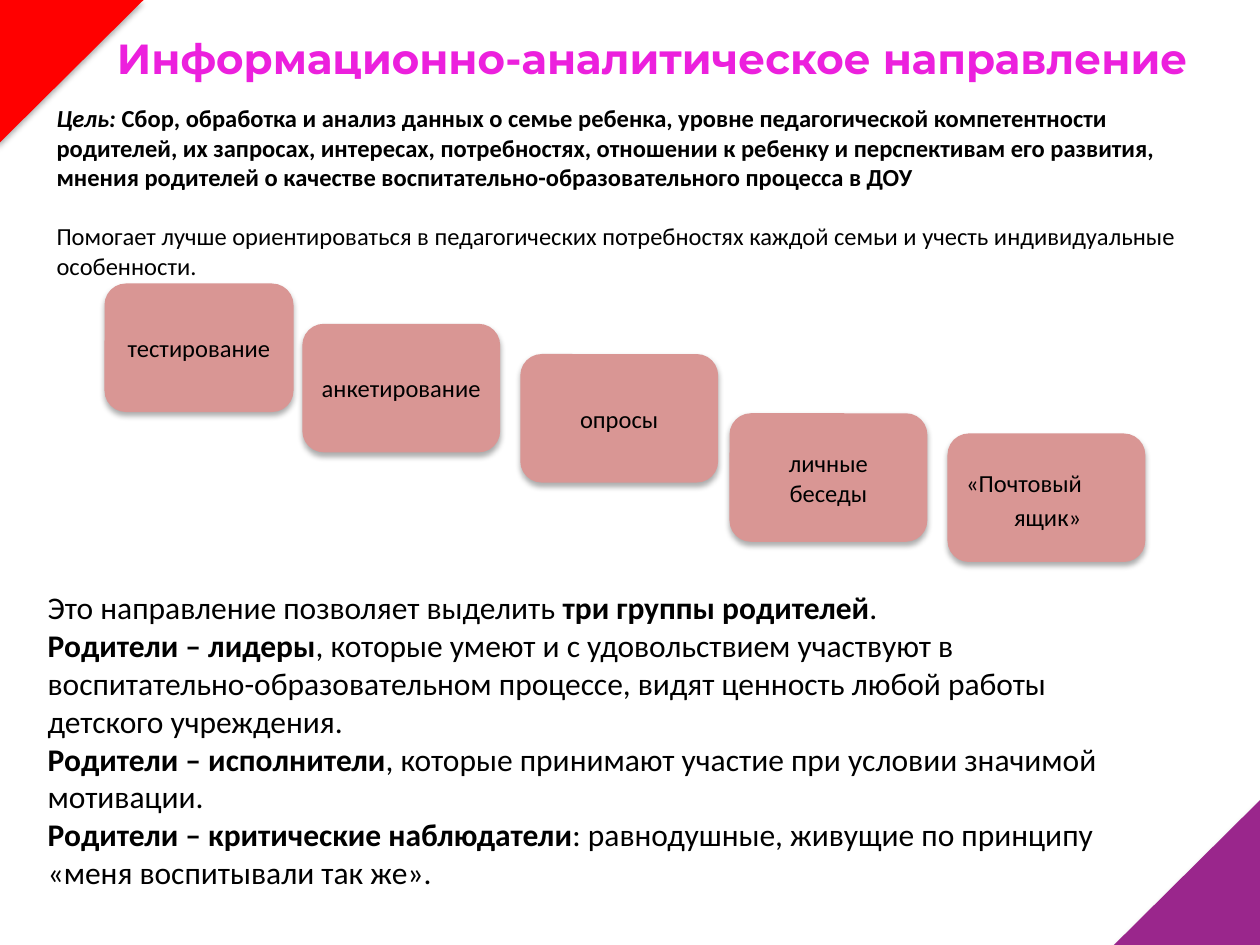
import pptx
import pptx.dml.color
import pptx.enum.shapes
import pptx.enum.text
import pptx.oxml
import pptx.oxml.ns
import pptx.util

Inches = pptx.util.Inches
Pt = pptx.util.Pt
RGBColor = pptx.dml.color.RGBColor
MSO_SHAPE = pptx.enum.shapes.MSO_SHAPE
PP_ALIGN = pptx.enum.text.PP_ALIGN

BLACK = RGBColor(0x00, 0x00, 0x00)
MAGENTA = RGBColor(0xEC, 0x20, 0xDD)
RED = RGBColor(0xFF, 0x00, 0x00)
PURPLE = RGBColor(0x9A, 0x26, 0x8C)
PINK = RGBColor(0xD9, 0x96, 0x94)

SHADOW = (
    '<a:outerShdw %s blurRad="44450" dist="27940" dir="5400000" rotWithShape="0">'
    '<a:srgbClr val="000000"><a:alpha val="32000"/></a:srgbClr></a:outerShdw>'
    % pptx.oxml.ns.nsdecls("a")
)

TITLE = "Информационно-аналитическое направление"
GOAL = [
    [("Цель: ", True, True),
     ("Сбор, обработка и анализ данных о семье ребенка, уровне педагогической "
      "компетентности родителей, их запросах, интересах, потребностях, отношении "
      "к ребенку и перспективам его развития, мнения родителей о качестве "
      "воспитательно-образовательного процесса в ДОУ", True, False)],
    [("Помогает лучше ориентироваться в педагогических потребностях каждой семьи "
      "и учесть индивидуальные особенности.", False, False)],
]
GROUPS = [
    [("Это направление позволяет выделить ", False, False),
     ("три группы родителей", True, False), (".", False, False)],
    [("Родители – лидеры", True, False),
     (", которые умеют и с удовольствием участвуют в воспитательно-образовательном "
      "процессе, видят ценность любой работы детского учреждения.", False, False)],
    [("Родители – исполнители", True, False),
     (", которые принимают участие при условии значимой мотивации.", False, False)],
    [("Родители – критические наблюдатели", True, False),
     (": равнодушные, живущие по принципу «меня воспитывали так же».", False, False)],
]
METHODS = [
    ("тестирование", 0.83, 2.25, 1.5),
    ("анкетирование", 2.4, 2.57, 1.57),
    ("опросы", 4.13, 2.81, 1.57),
    ("личные беседы", 5.79, 3.28, 1.57),
    ("«Почтовый ящик»", 7.52, 3.44, 1.57),
]


def add_run(p, text, size, bold=False, italic=False, color=BLACK, font="Calibri"):
    """Append one formatted run to a paragraph."""
    r = p.add_run()
    r.text = text
    r.font.name = font
    r.font.size = Pt(size)
    r.font.bold = bold
    r.font.italic = italic
    r.font.color.rgb = color


def add_text(s, x, y, w, h):
    """Add a wrapping text box and return its text frame."""
    tf = s.shapes.add_textbox(Inches(x), Inches(y), Inches(w), Inches(h)).text_frame
    tf.word_wrap = True
    return tf


def add_paragraphs(tf, paragraphs, size):
    """Fill a text frame with paragraphs of (text, bold, italic) runs."""
    for i, runs in enumerate(paragraphs):
        p = tf.add_paragraph() if i else tf.paragraphs[0]
        for text, bold, italic in runs:
            add_run(p, text, size, bold, italic)


def add_shadowed(s, kind, x, y, w, h, color):
    """Add a borderless filled shape with a soft shadow below it."""
    sp = s.shapes.add_shape(kind, Inches(x), Inches(y), Inches(w), Inches(h))
    sp.fill.solid()
    sp.fill.fore_color.rgb = color
    sp.line.fill.background()
    sp.shadow.inherit = False
    effects = sp._element.spPr.find(pptx.oxml.ns.qn("a:effectLst"))
    effects.append(pptx.oxml.parse_xml(SHADOW))
    return sp


def add_corner(s, x, y, color, rotation=0):
    """Add a triangle that fills a corner of the slide."""
    sp = add_shadowed(s, MSO_SHAPE.RIGHT_TRIANGLE, x, y, 1.16, 1.15, color)
    sp._element.spPr.find(pptx.oxml.ns.qn("a:xfrm")).set("flipV", "1")
    sp.rotation = rotation


def add_method(s, label, x, y, w):
    """Add a rounded box naming one method and return its paragraph."""
    sp = add_shadowed(s, MSO_SHAPE.ROUNDED_RECTANGLE, x, y, w, 1.02, PINK)
    tf = sp.text_frame
    tf.word_wrap = True
    tf.vertical_anchor = pptx.enum.text.MSO_ANCHOR.MIDDLE
    p = tf.paragraphs[0]
    p.alignment = PP_ALIGN.CENTER
    add_run(p, label, 14)
    return p


def hang(p, indent):
    """Left-align a paragraph with a hanging indent and looser spacing."""
    p.alignment = PP_ALIGN.LEFT
    p.line_spacing = 1.15
    p.space_after = Pt(10)
    pPr = p._p.get_or_add_pPr()
    pPr.set("marL", str(Inches(indent)))
    pPr.set("indent", str(-Inches(indent)))


def main():
    """Build the slide and save it."""
    prs = pptx.Presentation()
    prs.slide_width, prs.slide_height = Inches(10), Inches(7.5)
    s = prs.slides.add_slide(prs.slide_layouts[6])

    tf = add_text(s, 0.83, 0.21, 9.17, 0.81)
    add_run(tf.paragraphs[0], TITLE, 24, True, color=MAGENTA, font="Montserrat")

    tf = add_text(s, 0.35, 0.77, 9.45, 3.16)
    add_paragraphs(tf, GOAL, 14)
    tf.paragraphs[1].space_before = Pt(17)

    add_corner(s, -0.02, 0, RED)
    add_paragraphs(add_text(s, 0.28, 4.62, 9.06, 2.52), GROUPS, 18)

    boxes = [add_method(s, *method) for method in METHODS]
    hang(boxes[-1], 0.38)

    add_corner(s, 8.84, 6.35, PURPLE, 180)
    prs.save("out.pptx")


if __name__ == "__main__":
    main()
